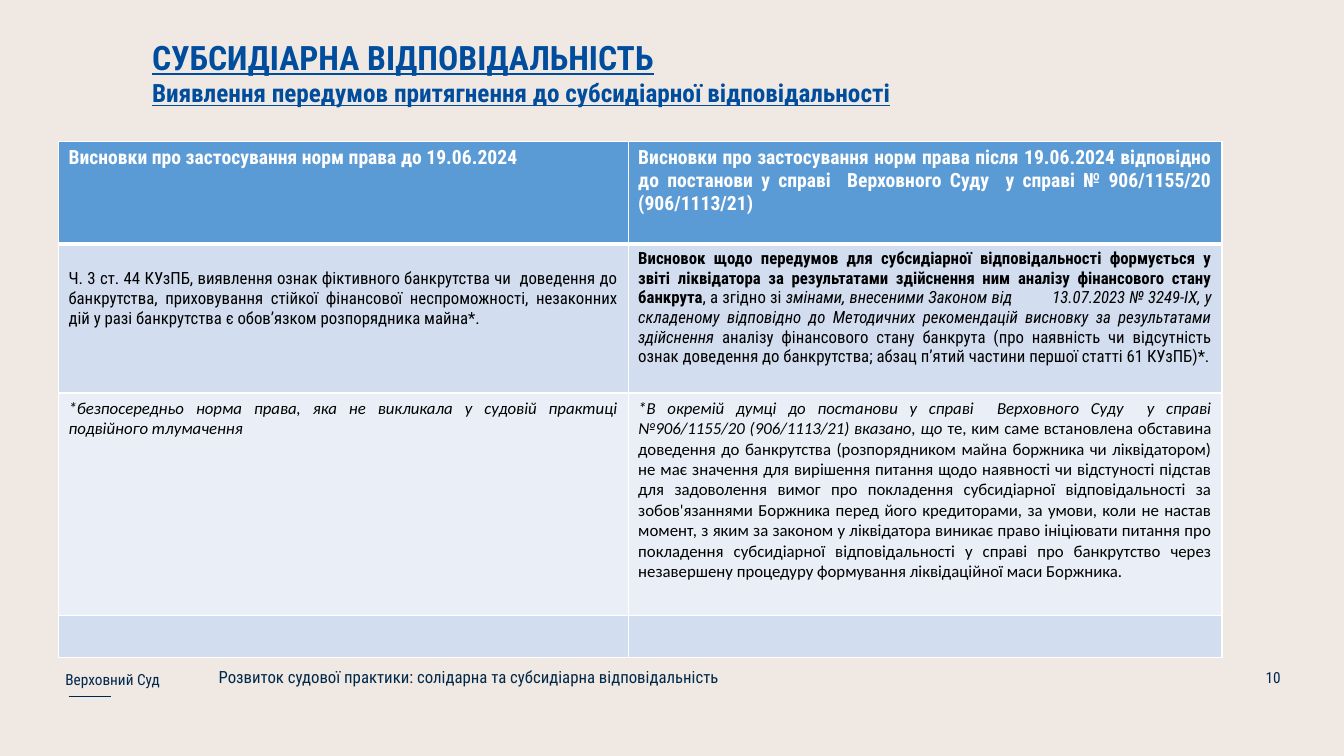
from lxml import etree
from pptx import Presentation
from pptx import util as u
from pptx.dml import color
from pptx.enum import shapes, text
from pptx.oxml import ns

CONDENSED = "Roboto Condensed"
NAVY = "00274E"
HEADING = dict(name=CONDENSED, bold=True, underline=True)
HEADER = dict(name=CONDENSED, size=u.Pt(14), bold=True)
BODY = dict(name=CONDENSED, size=u.Pt(12), bold=False, italic=False)
KEY = BODY | dict(bold=True)
LAW = BODY | dict(italic=True)
NOTE = BODY | dict(name="Calibri")
QUOTE = NOTE | dict(italic=True)
LABEL = dict(name=CONDENSED, size=u.Pt(10.9))
JUSTIFY = text.PP_ALIGN.JUSTIFY

COLUMNS = (5.65, 5.89)
DATE_TAB = 4.08
ROWS = [
    (1.02, "5B9BD5", "FFFFFF", [
        [("Висновки про застосування норм права до 19.06.2024", HEADER)],
        [("Висновки про застосування норм права після 19.06.2024 відповідно до постанови "
          "у справі  Верховного Суду  у справі № 906/1155/20 (906/1113/21)", HEADER)]]),
    (1.48, "D2DEEF", "000000", [
        [("Ч. 3 ст. 44 КУзПБ, виявлення ознак фіктивного банкрутства чи  доведення до "
          "банкрутства, приховування стійкої фінансової неспроможності, незаконних дій у "
          "разі банкрутства є обов’язком розпорядника майна*.", BODY)],
        [("Висновок щодо передумов для субсидіарної відповідальності формується у звіті "
          "ліквідатора за результатами здійснення ним аналізу фінансового стану банкрута", KEY),
         (", а згідно зі", BODY),
         (" змінами, внесеними Законом від\t13.07.2023 № 3249-IX, у складеному відповідно "
          "до Методичних рекомендацій висновку за результатами здійснення ", LAW),
         ("аналізу фінансового стану банкрута (про наявність чи відсутність ознак доведення "
          "до банкрутства; абзац п’ятий частини першої статті 61 КУзПБ)*.", BODY)]]),
    (2.21, "EAEFF7", "000000", [
        [("*безпосередньо норма права, яка не викликала у судовій практиці подвійного "
          "тлумачення", QUOTE)],
        [("*В окремій думці до постанови у справі  Верховного Суду  у справі №906/1155/20 "
          "(906/1113/21) вказано, що ", QUOTE),
         ("те, ким саме встановлена обставина доведення до банкрутства (розпорядником майна "
          "боржника чи ліквідатором) не має значення для вирішення питання щодо наявності чи "
          "відстуності підстав для задоволення вимог про покладення субсидіарної "
          "відповідальності за зобов'язаннями Боржника перед його кредиторами, за умови, коли "
          "не настав момент, з яким за законом у ліквідатора виникає право ініціювати питання "
          "про покладення субсидіарної відповідальності у справі про банкрутство через "
          "незавершену процедуру формування ліквідаційної маси Боржника.", NOTE)]]),
    (0.41, "D2DEEF", "000000", [[], []]),
]


def rgb(code):
    return color.RGBColor.from_string(code)


def apply(target, values):
    for key, value in values.items():
        setattr(target, key, value)


def write(paragraph, runs, ink, **layout):
    apply(paragraph, layout)
    for wording, style in runs:
        run = paragraph.add_run()
        run.text = wording
        apply(run.font, style)
        run.font.color.rgb = rgb(ink)


def text_frame(slide, box, anchor=text.MSO_ANCHOR.TOP):
    frame = slide.shapes.add_textbox(*map(u.Inches, box)).text_frame
    apply(frame, dict(word_wrap=True, vertical_anchor=anchor))
    return frame


def heading(slide, box):
    frame = text_frame(slide, box)
    write(frame.paragraphs[0],
          [("СУБСИДІАРНА ВІДПОВІДАЛЬНІСТЬ", HEADING | dict(size=u.Pt(24)))], "004D9D")
    write(frame.add_paragraph(),
          [("Виявлення передумов притягнення до субсидіарної відповідальності",
            HEADING | dict(size=u.Pt(18)))], "004D9D")


def cell_borders(cell, bottom):
    properties = cell._tc.get_or_add_tcPr()
    for place, (side, width) in enumerate(dict(lnL=1, lnR=1, lnT=1, lnB=bottom).items()):
        border = etree.Element(ns.qn(f"a:{side}"), w=str(u.Pt(width)))
        fill = etree.SubElement(border, ns.qn("a:solidFill"))
        etree.SubElement(fill, ns.qn("a:srgbClr"), val="FFFFFF")
        properties.insert(place, border)


def tab_stop(paragraph, inches):
    stops = etree.SubElement(paragraph._p.get_or_add_pPr(), ns.qn("a:tabLst"))
    etree.SubElement(stops, ns.qn("a:tab"), pos=str(u.Inches(inches)), algn="l")


def conclusions(slide, left, top):
    height = sum(row[0] for row in ROWS)
    box = (left, top, sum(COLUMNS), height)
    table = slide.shapes.add_table(len(ROWS), len(COLUMNS), *map(u.Inches, box)).table
    for column, width in zip(table.columns, COLUMNS):
        column.width = u.Inches(width)
    for r, (row_height, shade, ink, contents) in enumerate(ROWS):
        table.rows[r].height = u.Inches(row_height)
        for c, runs in enumerate(contents):
            cell = table.cell(r, c)
            cell.fill.solid()
            cell.fill.fore_color.rgb = rgb(shade)
            cell_borders(cell, 3 if r == 0 else 1)
            paragraph = cell.text_frame.paragraphs[0]
            write(paragraph, runs, ink, alignment=JUSTIFY if r or c else text.PP_ALIGN.LEFT)
            if any("\t" in wording for wording, _ in runs):
                tab_stop(paragraph, DATE_TAB)
    table.cell(1, 0).margin_top = u.Inches(0.25)


def footer(slide, left, top, width):
    middle = text.MSO_ANCHOR.MIDDLE
    court = text_frame(slide, (left, top + 0.01, 1.44, 0.4), middle)
    write(court.paragraphs[0], [("Верховний Суд", LABEL)], NAVY, line_spacing=1.14)

    topic = text_frame(slide, (left + 1.52, top + 0.07, 8.45, 0.36))
    write(topic.paragraphs[0],
          [("Розвиток судової практики: солідарна та субсидіарна відповідальність",
            dict(name=CONDENSED, size=u.Pt(12)))],
          "002949", alignment=JUSTIFY, line_spacing=0.9)

    number = text_frame(slide, (left + width - 3, top, 3, 0.4), middle)
    write(number.paragraphs[0], [("10", LABEL)], NAVY, alignment=text.PP_ALIGN.RIGHT)

    ends = (left + 0.13, top + 0.39, left + 0.55, top + 0.39)
    rule = slide.shapes.add_connector(shapes.MSO_CONNECTOR.STRAIGHT, *map(u.Inches, ends))
    rule.line.color.rgb = rgb(NAVY)
    rule.line.width = u.Pt(1.12)
    etree.SubElement(rule._element.spPr, ns.qn("a:effectLst"))


def main():
    deck = Presentation()
    apply(deck, dict(slide_width=u.Inches(13.33), slide_height=u.Inches(7.5)))
    slide = deck.slides.add_slide(deck.slide_layouts[6])
    slide.background.fill.solid()
    slide.background.fill.fore_color.rgb = rgb("F0E8E3")
    heading(slide, (1.41, 0.32, 11.65, 0.81))
    footer(slide, 0.55, 6.52, 12.25)
    conclusions(slide, 0.58, 1.4)
    deck.save("out.pptx")


if __name__ == "__main__":
    main()
